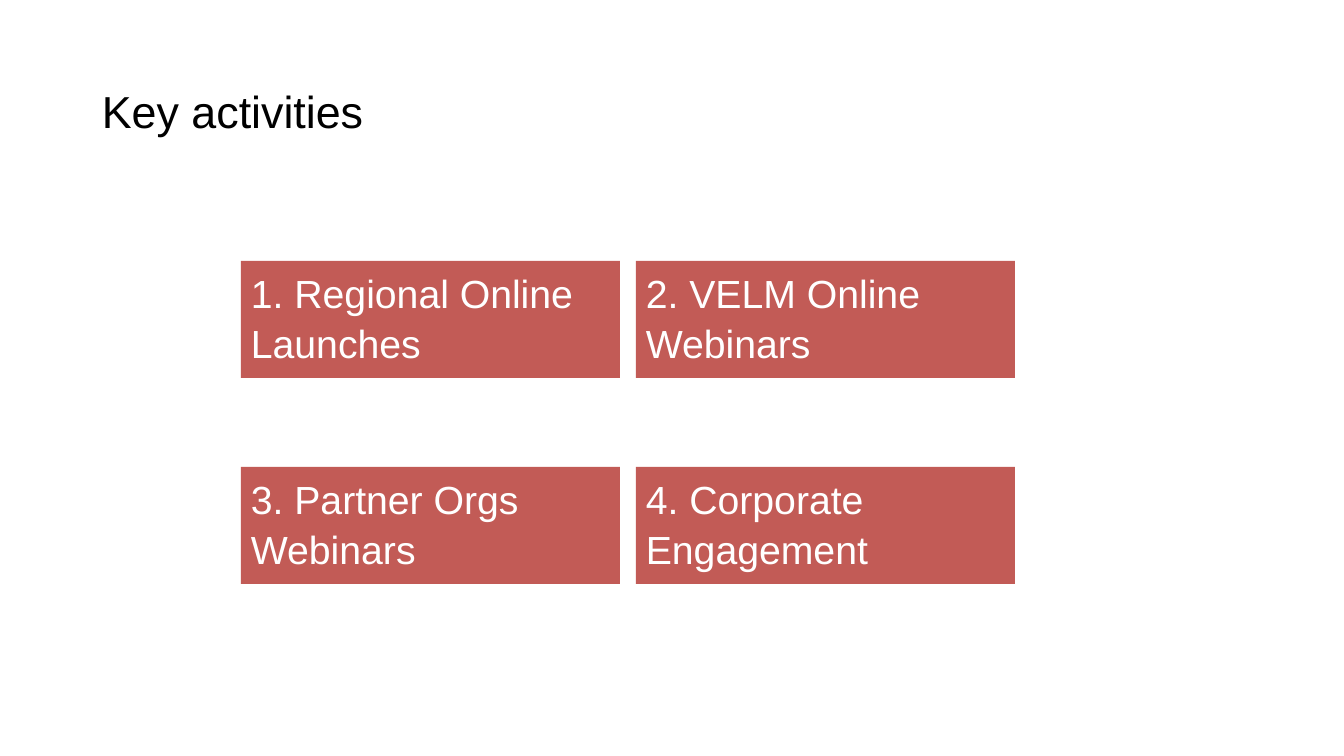
from pptx import Presentation
from pptx.dml.color import RGBColor
from pptx.enum.shapes import MSO_SHAPE
from pptx.enum.text import MSO_ANCHOR, MSO_AUTO_SIZE, PP_ALIGN
from pptx.util import Pt

TITLE = "Key activities"
ACTIVITIES = [
    "1. Regional Online Launches",
    "2. VELM Online Webinars",
    "3. Partner Orgs Webinars",
    "4. Corporate Engagement",
]
FONT = "Arial"
RED, WHITE, BLACK = "C25B56", "FFFFFF", "000000"

PX = 9071  # EMU per px, at 100.8 px to the inch
SLIDE_W, SLIDE_H = 1344, 756
TITLE_BOX = (92, 79, 296, 65)
COLUMNS = 2
GRID_X, GRID_Y = 241, 261
CARD_W, CARD_H = 379, 117
STEP_X, STEP_Y = 395, 206


def px(*lengths):
    return [n * PX for n in lengths]


def rgb(color):
    return RGBColor.from_string(color)


def write(sp, text, size, color, spacing=None):
    tf = sp.text_frame
    tf.word_wrap = True
    tf.vertical_anchor = MSO_ANCHOR.TOP
    p = tf.paragraphs[0]
    p.alignment = PP_ALIGN.LEFT
    if spacing:
        p.line_spacing = spacing
    r = p.add_run()
    r.text = text
    r.font.name = FONT
    r.font.size = Pt(size)
    r.font.color.rgb = rgb(color)


def add_title(s):
    sp = s.shapes.add_textbox(*px(*TITLE_BOX))
    write(sp, TITLE, 32, BLACK)
    sp.text_frame.auto_size = MSO_AUTO_SIZE.SHAPE_TO_FIT_TEXT


def add_card(s, index, text):
    row, col = divmod(index, COLUMNS)
    x, y = GRID_X + col * STEP_X, GRID_Y + row * STEP_Y
    sp = s.shapes.add_shape(MSO_SHAPE.RECTANGLE, *px(x, y, CARD_W, CARD_H))
    sp.shadow.inherit = False
    sp.fill.solid()
    sp.fill.fore_color.rgb = rgb(RED)
    sp.line.fill.background()
    write(sp, text, 28, WHITE, 1.07)


def main():
    prs = Presentation()
    prs.slide_width, prs.slide_height = px(SLIDE_W, SLIDE_H)
    s = prs.slides.add_slide(prs.slide_layouts[6])
    add_title(s)
    for i, text in enumerate(ACTIVITIES):
        add_card(s, i, text)
    prs.save("out.pptx")


if __name__ == "__main__":
    main()
